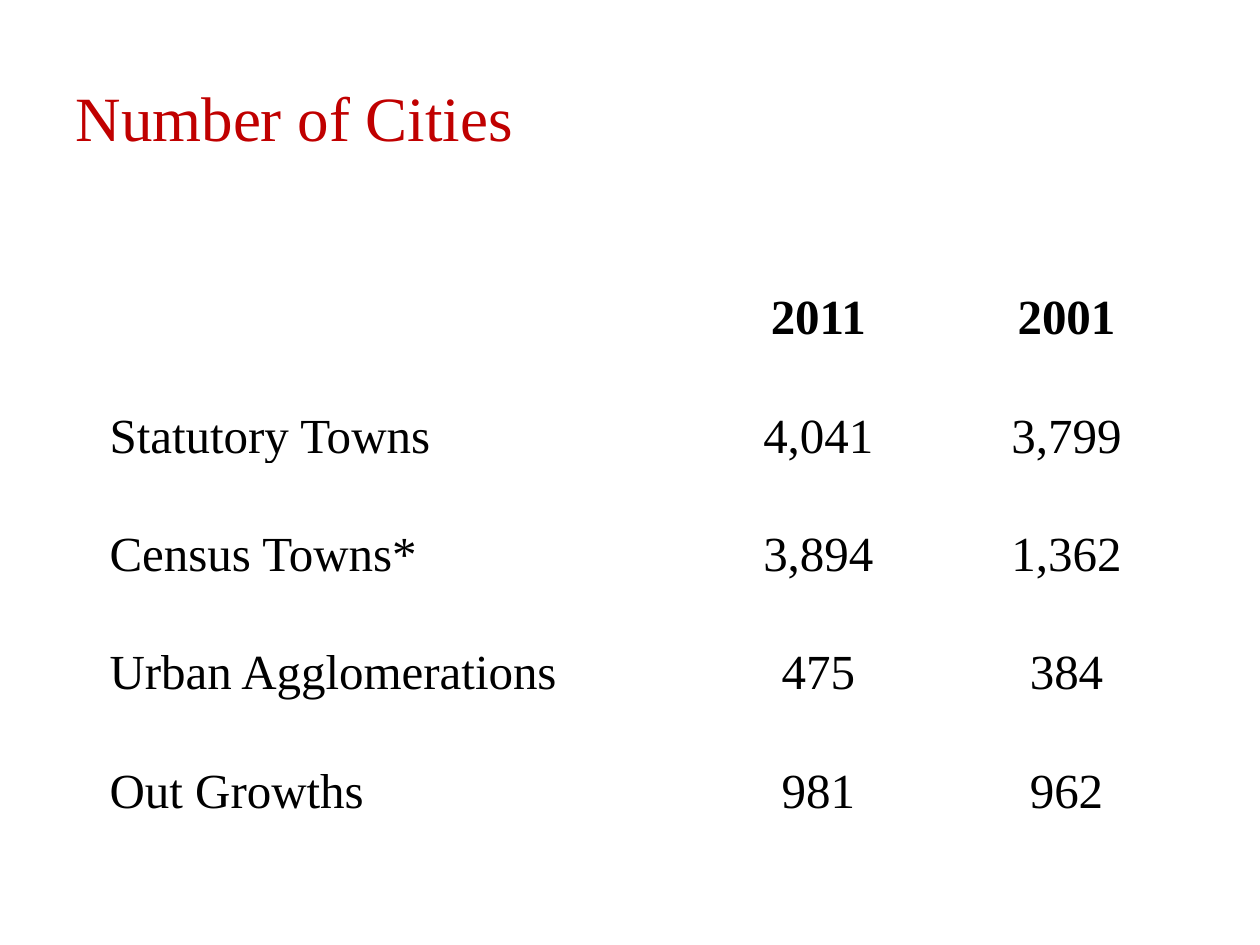
import dataclasses

import pptx
import pptx.dml.color
import pptx.enum.text
import pptx.util

RED = pptx.dml.color.RGBColor(0xC0, 0x00, 0x00)
BLACK = pptx.dml.color.RGBColor(0x00, 0x00, 0x00)
FONT = "Times New Roman"
WIDTHS = (4.65, 1.97, 1.97)
HEIGHT = 0.94

Inches = pptx.util.Inches
Align = pptx.enum.text.PP_ALIGN
Anchor = pptx.enum.text.MSO_ANCHOR


@dataclasses.dataclass(frozen=True)
class Row:
    label: str
    new: str
    old: str
    bold: bool = False


ROWS = (
    Row("", "2011", "2001", bold=True),
    Row("Statutory Towns", "4,041", "3,799"),
    Row("Census Towns*", "3,894", "1,362"),
    Row("Urban Agglomerations", "475", "384"),
    Row("Out Growths", "981", "962"),
)


def style(para, size: float, color: pptx.dml.color.RGBColor,
          align: Align, bold: bool = False) -> None:
    para.alignment = align
    for run in para.runs:
        run.font.name = FONT
        run.font.size = pptx.util.Pt(size)
        run.font.bold = bold
        run.font.color.rgb = color


def add_title(slide, text: str) -> None:
    title = slide.shapes.title
    title.left, title.top = Inches(0.5), Inches(0.3)
    title.width, title.height = Inches(9), Inches(1.25)
    title.text_frame.text = text
    title.text_frame.vertical_anchor = Anchor.MIDDLE
    style(title.text_frame.paragraphs[0], 36, RED, Align.LEFT)


def fill_cell(cell, text: str, align: Align, bold: bool) -> None:
    cell.fill.background()
    cell.vertical_anchor = Anchor.BOTTOM
    cell.margin_left = cell.margin_right = cell.margin_top = Inches(0.01)
    cell.margin_bottom = 0
    cell.text_frame.text = text
    style(cell.text_frame.paragraphs[0], 28, BLACK, align, bold)


def add_counts(slide, rows: tuple[Row, ...]) -> None:
    frame = slide.shapes.add_table(
        len(rows), len(WIDTHS), Inches(0.86), Inches(1.8),
        Inches(sum(WIDTHS)), Inches(HEIGHT * len(rows)))
    table = frame.table
    table.first_row = table.horz_banding = False
    for col, width in zip(table.columns, WIDTHS):
        col.width = Inches(width)
    for line, row in zip(table.rows, rows):
        line.height = Inches(HEIGHT)
        for i, text in enumerate((row.label, row.new, row.old)):
            align = Align.CENTER if i else Align.LEFT
            fill_cell(line.cells[i], text, align, row.bold)


def main() -> None:
    deck = pptx.Presentation()
    deck.slide_width, deck.slide_height = Inches(10), Inches(7.5)
    slide = deck.slides.add_slide(deck.slide_layouts.get_by_name("Title Only"))
    add_title(slide, "Number of Cities")
    add_counts(slide, ROWS)
    deck.save("out.pptx")


if __name__ == "__main__":
    main()
